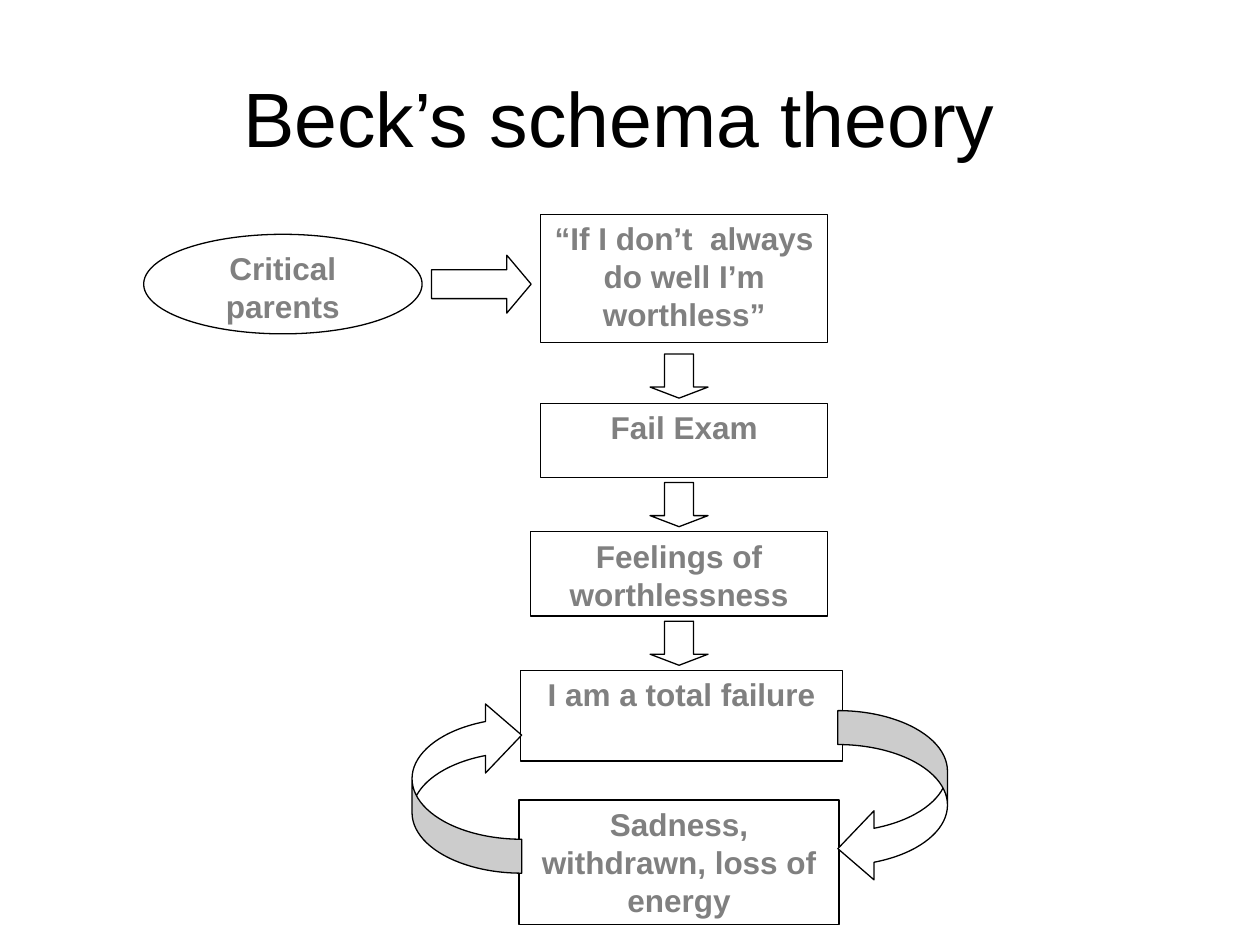
from pptx import Presentation
from pptx.dml.color import RGBColor
from pptx.enum.shapes import MSO_SHAPE
from pptx.enum.text import MSO_ANCHOR, PP_ALIGN
from pptx.util import Inches, Pt

BLACK = RGBColor(0x00, 0x00, 0x00)
GREY = RGBColor(0x80, 0x80, 0x80)
WHITE = RGBColor(0xFF, 0xFF, 0xFF)

BOXES = [
    (4.29, 1.7, 2.28, 1.02, "“If I don’t  always do well I’m worthless”"),
    (4.29, 3.2, 2.28, 0.59, "Fail Exam"),
    (4.21, 4.22, 2.36, 0.67, "Feelings of worthlessness"),
    (4.13, 5.32, 2.56, 0.72, "I am a total failure"),
    (4.12, 6.35, 2.54, 0.99, "Sadness, withdrawn, loss of energy"),
]


def add_text(frame, lines, size, color, bold=False):
    """Fill a text frame with centred lines, one run each."""
    frame.word_wrap = True
    for i, line in enumerate(lines):
        para = frame.paragraphs[0] if i == 0 else frame.add_paragraph()
        para.alignment = PP_ALIGN.CENTER
        run = para.add_run()
        run.text = line
        font = run.font
        font.name, font.size, font.bold = "Arial", Pt(size), bold
        font.color.rgb = color


def add_title(slide, text):
    """Add the slide title."""
    box = slide.shapes.add_textbox(
        Inches(0.5), Inches(0.3), Inches(9), Inches(1.25))
    box.text_frame.vertical_anchor = MSO_ANCHOR.MIDDLE
    add_text(box.text_frame, [text], 44, BLACK)


def add_form(slide, kind, left, top, width, height):
    """Add a white preset shape with a thin black outline."""
    form = slide.shapes.add_shape(
        kind, Inches(left), Inches(top), Inches(width), Inches(height))
    form.shadow.inherit = False
    form.fill.solid()
    form.fill.fore_color.rgb = WHITE
    form.line.color.rgb = BLACK
    form.line.width = Pt(0.75)
    return form


def add_node(slide, kind, left, top, width, height, lines, inset=0.04):
    """Add a shape that holds one step of the theory."""
    frame = add_form(slide, kind, left, top, width, height).text_frame
    frame.vertical_anchor = MSO_ANCHOR.TOP
    frame.margin_left = frame.margin_right = Inches(0.08)
    frame.margin_top = Inches(inset)
    frame.margin_bottom = Inches(0.04)
    add_text(frame, lines, 18, GREY, bold=True)


def add_arrow(slide, kind, left, top, width, height, ratios, turn=0):
    """Add a block arrow with its proportions and rotation."""
    arrow = add_form(slide, kind, left, top, width, height)
    for i, ratio in enumerate(ratios):
        arrow.adjustments[i] = ratio
    arrow.rotation = turn


def main():
    """Build the slide and save it."""
    deck = Presentation()
    deck.slide_width, deck.slide_height = Inches(10), Inches(7.5)
    slide = deck.slides.add_slide(deck.slide_layouts[6])

    add_title(slide, "Beck’s schema theory ")
    add_node(slide, MSO_SHAPE.OVAL, 1.14, 1.86, 2.21, 0.79,
             ["Critical", "parents"], inset=0)
    for *place, text in BOXES:
        add_node(slide, MSO_SHAPE.RECTANGLE, *place, [text])

    down, curve = MSO_SHAPE.DOWN_ARROW, MSO_SHAPE.CURVED_LEFT_ARROW
    for top in (2.81, 3.83, 4.93):
        add_arrow(slide, down, 5.16, top, 0.46, 0.35, (0.5, 0.25))
    add_arrow(slide, down, 3.59, 1.86, 0.46, 0.79, (0.5, 0.42), 270)
    for left, top, turn in ((6.65, 5.64, 0), (3.27, 5.56, 180)):
        add_arrow(slide, curve, left, top, 0.87, 1.37,
                  (0.31, 0.63, 0.33), turn)

    deck.save("out.pptx")


if __name__ == "__main__":
    main()
